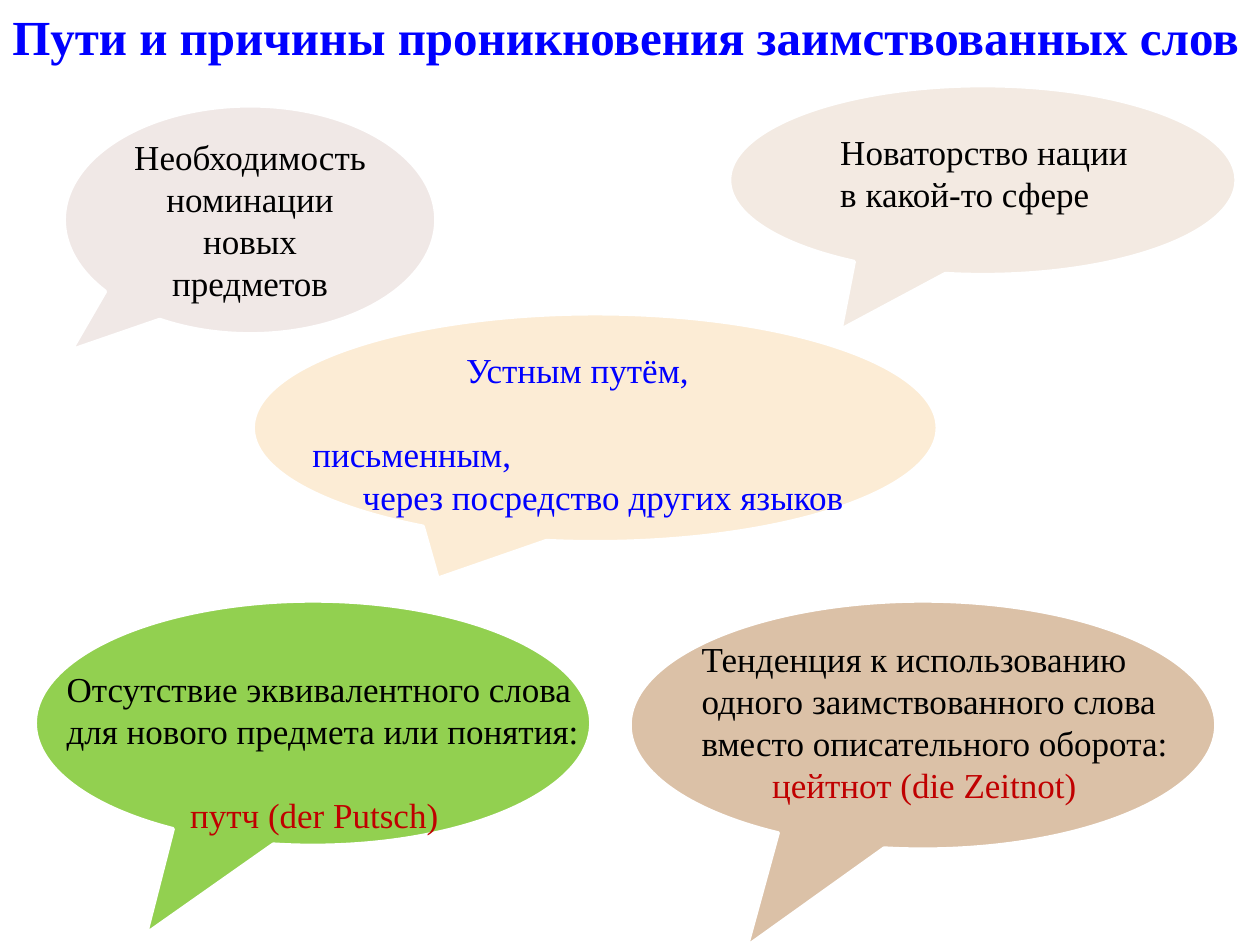
from pptx import Presentation
from pptx.dml.color import RGBColor
from pptx.enum.shapes import MSO_SHAPE
from pptx.enum.text import MSO_ANCHOR, PP_ALIGN
from pptx.util import Inches, Pt

CALLOUT = MSO_SHAPE.OVAL_CALLOUT
MIDDLE = MSO_ANCHOR.MIDDLE
LEFT, CENTER = PP_ALIGN.LEFT, PP_ALIGN.CENTER

THEME = {
    "font": "Times New Roman",
    "title_size": 28,
    "body_size": 20,
    "gap": 24,
    "outline": "FFFFFF",
    "outline_width": 2,
    "black": "000000",
    "blue": "0000FF",
    "red": "C00000",
    "cream": "FCECD5",
    "green": "92D050",
    "sand": "F3EAE2",
    "tan": "DBC1A7",
    "rose": "F0E8E6",
}

CALLOUTS = [
    ((2.01, 2.49, 5.43, 1.81), (-0.23, 0.66), "cream", None),
    ((0.28, 4.77, 4.41, 1.94), (-0.3, 0.86), "green", None),
    ((5.79, 0.68, 4.02, 1.5), (-0.28, 0.79), "sand", None),
    ((5, 4.77, 4.65, 1.97), (-0.3, 0.89), "tan", None),
    ((0.51, 0.84, 2.95, 1.81), (-0.48, 0.57), "rose",
     "Необходимость номинации новых предметов"),
]

TITLE = ((0, 0, 10, 0.57),
         [("Пути и причины проникновения заимствованных слов", "blue", 0, 0)])

LABELS = [
    ((2.34, 2.72, 4.55, 1.18), [
        ("Устным путём,", "blue", 1.26, 0),
        ("письменным,", "blue", 0.04, THEME["gap"]),
        ("через посредство других языков", "blue", 0.44, 0),
    ]),
    ((6.57, 0.99, 2.68, 0.77), [
        ("Новаторство нации в какой-то сфере", "black", 0, 0),
    ]),
    ((0.43, 5.25, 4.41, 1.45), [
        ("Отсутствие эквивалентного слова для нового предмета или понятия:", "black", 0, 0),
        ("путч (der Putsch)", "red", 0.98, THEME["gap"]),
    ]),
    ((5.47, 5.01, 4.17, 1.45), [
        ("Тенденция к использованию одного заимствованного слова "
         "вместо описательного оборота:", "black", 0, 0),
        ("цейтнот (die Zeitnot)", "red", 0.56, 0),
    ]),
]


def color(name):
    return RGBColor.from_string(THEME[name])


def write(paragraph, text, color_name, size, bold=False, alignment=LEFT):
    paragraph.text = text
    paragraph.alignment = alignment
    font = paragraph.runs[0].font
    font.name = THEME["font"]
    font.size = Pt(size)
    font.bold = bold
    font.color.rgb = color(color_name)


def add_callout(slide, box, tail, fill, text):
    shape = slide.shapes.add_shape(CALLOUT, *map(Inches, box))
    shape.shadow.inherit = False
    shape.adjustments[0], shape.adjustments[1] = tail
    shape.fill.solid()
    shape.fill.fore_color.rgb = color(fill)
    shape.line.color.rgb = color("outline")
    shape.line.width = Pt(THEME["outline_width"])
    if text:
        shape.text_frame.vertical_anchor = MIDDLE
        write(shape.text_frame.paragraphs[0], text, "black",
              THEME["body_size"], alignment=CENTER)


def add_label(slide, box, lines, size, bold=False):
    frame = slide.shapes.add_textbox(*map(Inches, box)).text_frame
    frame.word_wrap = True
    for index, (text, color_name, indent, gap) in enumerate(lines):
        paragraph = frame.add_paragraph() if index else frame.paragraphs[0]
        write(paragraph, text, color_name, size, bold)
        paragraph.space_before = Pt(gap)
        paragraph._p.get_or_add_pPr().set("marL", str(Inches(indent)))


def main():
    presentation = Presentation()
    presentation.slide_width = Inches(10)
    presentation.slide_height = Inches(7.5)
    slide = presentation.slides.add_slide(presentation.slide_layouts[6])
    for callout in CALLOUTS:
        add_callout(slide, *callout)
    for label in LABELS:
        add_label(slide, *label, THEME["body_size"])
    add_label(slide, *TITLE, THEME["title_size"], bold=True)
    presentation.save("out.pptx")


if __name__ == "__main__":
    main()
